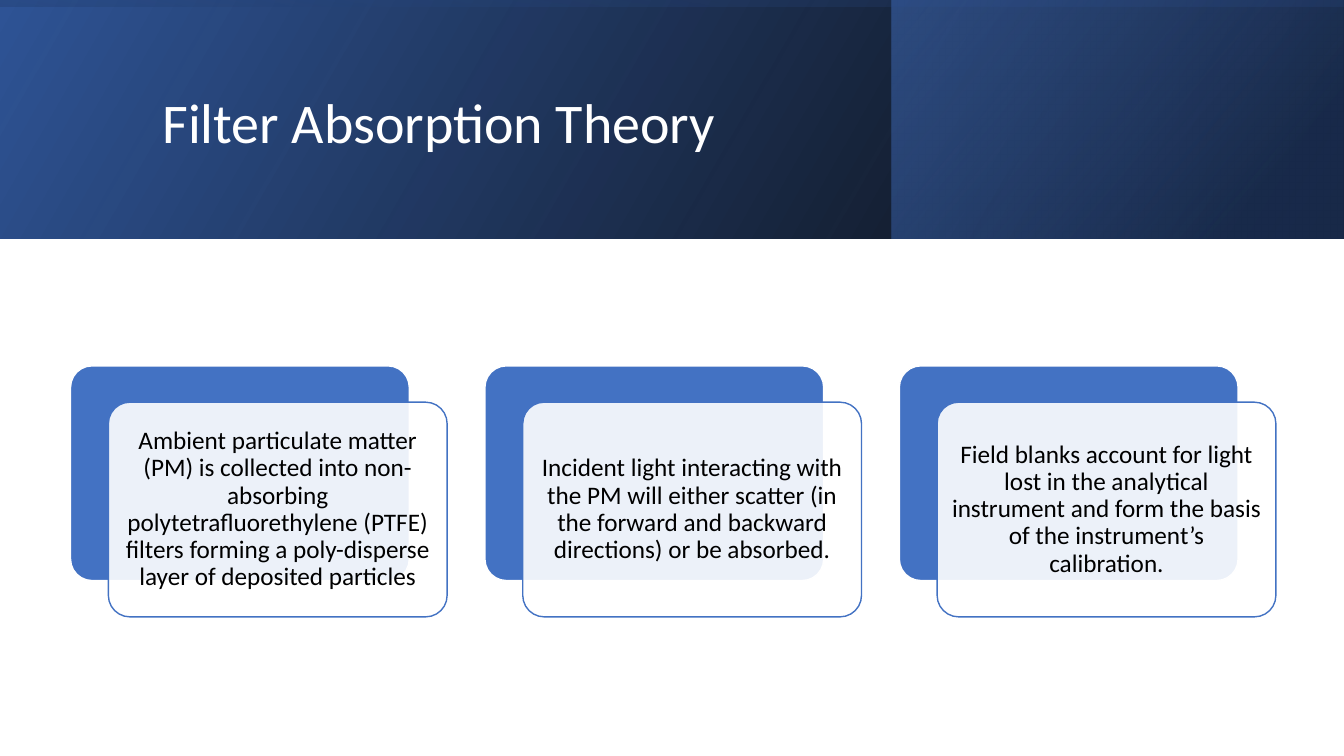
from lxml import etree
from pptx import Presentation
from pptx.dml.color import RGBColor
from pptx.enum.shapes import MSO_SHAPE
from pptx.enum.text import MSO_ANCHOR, PP_ALIGN
from pptx.oxml.ns import qn
from pptx.util import Inches, Pt

RECT, ROUNDED = MSO_SHAPE.RECTANGLE, MSO_SHAPE.ROUNDED_RECTANGLE
MIDDLE = MSO_ANCHOR.MIDDLE
LEFT, CENTER = PP_ALIGN.LEFT, PP_ALIGN.CENTER
TITLE_ONLY = 5
BLUE, WHITE, BLACK = "4372C3", "FFFFFF", "000000"


def add_color(parent, hex_color, opacity):
    color = etree.SubElement(parent, qn("a:srgbClr"), val=hex_color)
    etree.SubElement(color, qn("a:alpha"), val=str(opacity * 1000))


def set_text(frame, text, size, hex_color, align):
    frame.text = text
    frame.word_wrap = True
    frame.vertical_anchor = MIDDLE
    paragraph = frame.paragraphs[0]
    paragraph.alignment = align
    paragraph.line_spacing = 0.9
    font = paragraph.runs[0].font
    font.name, font.size = "Calibri", Pt(size)
    font.color.rgb = RGBColor.from_string(hex_color)


prs = Presentation()
prs.slide_width, prs.slide_height = Inches(13.33), Inches(7.5)
slide = prs.slides.add_slide(prs.slide_layouts[TITLE_ONLY])
shapes = slide.shapes

# Header: three overlaid gradient bands, stops as (position, colour, opacity)
bands = [
    ((0, 0, 13.33, 2.37), 0, 330, [(0, BLACK, 96), (100, "2F5496", 100)]),
    ((8.84, 0, 4.48, 2.37), 0, 320,
     [(0, "1F3864", 68), (19, "1F3864", 68), (100, "4472C4", 48)]),
    ((5.48, -5.48, 2.37, 13.33), 270, 350,
     [(0, "2F5496", 16), (23, "2F5496", 16), (99, BLACK, 45), (100, BLACK, 45)]),
]
for box, rotation, angle, stops in bands:
    band = shapes.add_shape(RECT, *map(Inches, box))
    band.rotation = rotation
    band.shadow.inherit = False
    band.line.fill.background()
    band.fill.gradient()
    properties = band._element.spPr
    properties.find(qn("a:xfrm")).set("flipH", "1")
    gradient = properties.find(qn("a:gradFill"))
    gradient.find(qn("a:lin")).set("ang", str(angle * 60000))
    stop_list = gradient.find(qn("a:gsLst"))
    stop_list.clear()
    for position, hex_color, opacity in stops:
        stop = etree.SubElement(stop_list, qn("a:gs"), pos=str(position * 1000))
        add_color(stop, hex_color, opacity)

# Title, brought in front of the header
title = shapes.title
title.left, title.top = Inches(1.51), Inches(0.38)
title.width, title.height = Inches(10.63), Inches(1.72)
set_text(title.text_frame, "Filter Absorption Theory", 40, WHITE, LEFT)
shapes._spTree.append(title._element)

# Three theory points: a blue back plate and a translucent card in front
points = [
    "Ambient particulate matter (PM) is collected into non-absorbing "
    "polytetrafluorethylene (PTFE) filters forming a poly-disperse layer of "
    "deposited particles",
    "Incident light interacting with the PM will either scatter (in the forward "
    "and backward directions) or be absorbed.",
    "Field blanks account for light lost in the analytical instrument and form "
    "the basis of the instrument’s calibration.",
]
for column, point in enumerate(points):
    left = 0.7 + column * 4.11
    for x, y, fill, outline in [(left, 3.63, BLUE, WHITE),
                                (left + 0.375, 3.99, WHITE, BLUE)]:
        card = shapes.add_shape(ROUNDED, Inches(x), Inches(y),
                                Inches(3.36), Inches(2.13))
        card.adjustments[0] = 0.1
        card.shadow.inherit = False
        card.fill.solid()
        card.fill.fore_color.rgb = RGBColor.from_string(fill)
        card.line.color.rgb = RGBColor.from_string(outline)
        card.line.width = Pt(1)

    # The front card lets the plate show through and holds the text
    card_fill = card._element.spPr.find(qn("a:solidFill"))
    card_fill.clear()
    add_color(card_fill, WHITE, 90)
    frame = card.text_frame
    frame.margin_left = frame.margin_right = Inches(0.07)
    frame.margin_top = frame.margin_bottom = Inches(0.07)
    set_text(frame, point, 18, BLACK, CENTER)

prs.save("out.pptx")
